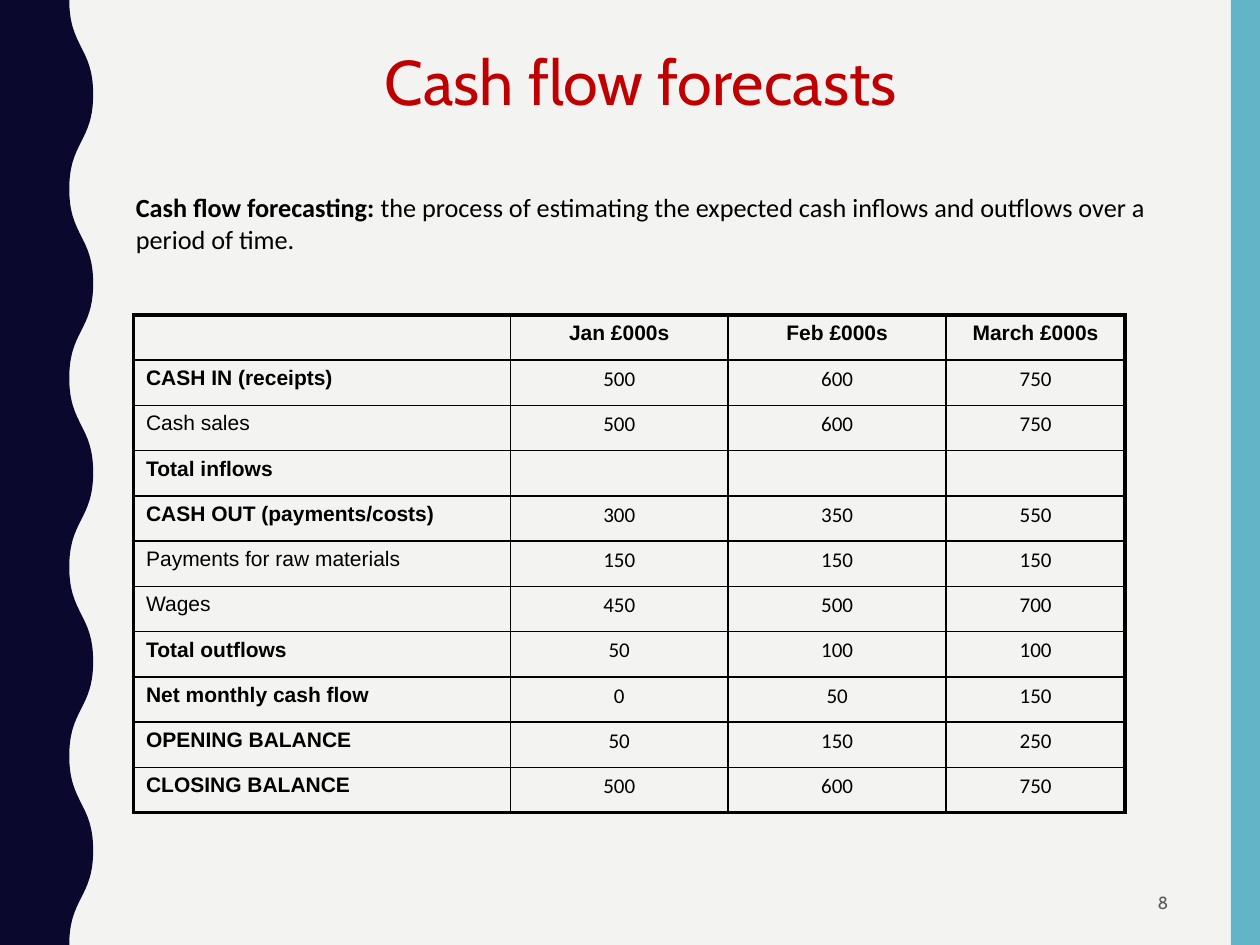
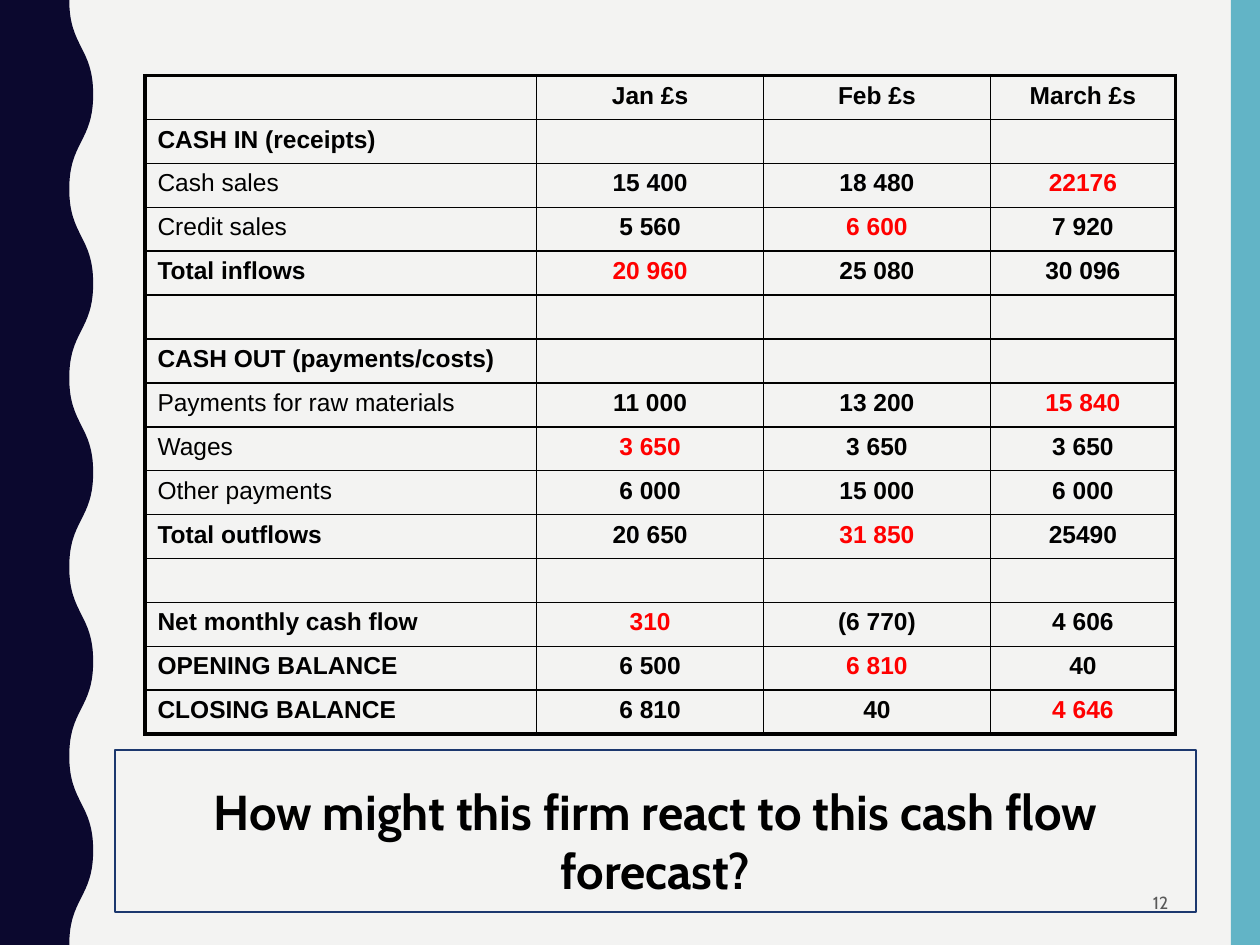
from pptx import Presentation
from pptx.dml.color import RGBColor
from pptx.enum.shapes import MSO_SHAPE as Preset
from pptx.enum.text import MSO_ANCHOR as Anchor, MSO_AUTO_SIZE as AutoSize, PP_ALIGN as Align
from pptx.oxml.ns import qn
from pptx.util import Inches, Pt
from lxml.etree import SubElement

PAPER, NAVY, TEAL = "F3F3F2", "0B082E", "62B4C6"
BLACK, GREY, RED, CRIMSON, OUTLINE = "000000", "595959", "FF0000", "C00000", "1B376E"
WIDTH, HEIGHT = 10, 7.5
BAND_WIDTH = 0.23
WAVE_INNER, WAVE_OUTER, WAVE_STEP = 0.55, 0.74, 0.75
THIN, THICK = 1, 2.25

PLAIN_LABELS = {"Cash sales", "Credit sales", "Payments for raw materials", "Wages", "Other payments"}
BLANK = ("", "", "")

FORECAST = {
    "place": (1.06, 2.5, 3.95),
    "columns": (2.99, 1.73, 1.73, 1.42),
    "size": 12,
    "value_font": "Calibri",
    "value_bold": False,
    "rows": [
        ("", ("Jan £000s", "Feb £000s", "March £000s"), None),
        ("CASH IN (receipts)", ("500", "600", "750"), None),
        ("Cash sales", ("500", "600", "750"), None),
        ("Total inflows", BLANK, None),
        ("CASH OUT (payments/costs)", ("300", "350", "550"), None),
        ("Payments for raw materials", ("150", "150", "150"), None),
        ("Wages", ("450", "500", "700"), None),
        ("Total outflows", ("50", "100", "100"), None),
        ("Net monthly cash flow", ("0", "50", "150"), None),
        ("OPENING BALANCE", ("50", "150", "250"), None),
        ("CLOSING BALANCE", ("500", "600", "750"), None),
    ],
}

ANSWERS = {
    "place": (1.15, 0.6, 5.23),
    "columns": (3.11, 1.8, 1.8, 1.47),
    "size": 14,
    "value_font": "Arial",
    "value_bold": True,
    "rows": [
        ("", ("Jan £s", "Feb £s", "March £s"), None),
        ("CASH IN (receipts)", BLANK, None),
        ("Cash sales", ("15 400", "18 480", "22176"), 3),
        ("Credit sales", ("5 560", "6 600", "7 920"), 2),
        ("Total inflows", ("20 960", "25 080", "30 096"), 1),
        ("", BLANK, None),
        ("CASH OUT (payments/costs)", BLANK, None),
        ("Payments for raw materials", ("11 000", "13 200", "15 840"), 3),
        ("Wages", ("3 650", "3 650", "3 650"), 1),
        ("Other payments", ("6 000", "15 000", "6 000"), None),
        ("Total outflows", ("20 650", "31 850", "25490"), 2),
        ("", BLANK, None),
        ("Net monthly cash flow", ("310", "(6 770)", "4 606"), 1),
        ("OPENING BALANCE", ("6 500", "6 810", "40"), 2),
        ("CLOSING BALANCE", ("6 810", "40", "4 646"), 3),
    ],
}

PAGES = [
    {
        "number": "8",
        "title": "Cash flow forecasts",
        "title_place": (0.17, 0.29, 9.83, 0.75),
        "title_format": {"size": 36, "color": CRIMSON},
        "table": FORECAST,
        "definition": (
            "Cash flow forecasting: ",
            "the process of estimating the expected cash inflows and outflows over a period of time.",
        ),
    },
    {
        "number": "12",
        "title": "How might this firm react to this cash flow forecast?",
        "title_place": (0.91, 5.95, 8.58, 1.29),
        "title_format": {"size": 28, "bold": True},
        "title_line": OUTLINE,
        "table": ANSWERS,
    },
]


def rgb(color):
    return RGBColor.from_string(color)


def write(para, text, font="Cabin", size=12, color=BLACK, bold=False, align=Align.LEFT):
    para.alignment = align
    if not text:
        para._p.get_or_add_endParaRPr().set("sz", str(size * 100))
        return
    span = para.add_run()
    span.text = text
    span.font.name = font
    span.font.size = Pt(size)
    span.font.bold = bold
    span.font.color.rgb = rgb(color)


def paint(shape, color):
    shape.fill.solid()
    shape.fill.fore_color.rgb = rgb(color)
    shape.line.fill.background()
    shape.shadow.inherit = False


def add_box(page, place, anchor=Anchor.TOP):
    frame = page.shapes.add_textbox(*map(Inches, place)).text_frame
    frame.word_wrap = True
    frame.vertical_anchor = anchor
    return frame.paragraphs[0]


def add_wave(page):
    steps = round(HEIGHT / WAVE_STEP)
    crests = [(Inches(WAVE_OUTER if step % 2 else WAVE_INNER), Inches(step * WAVE_STEP))
              for step in range(steps + 1)]
    builder = page.shapes.build_freeform(*crests[0])
    builder.add_line_segments([*crests[1:], (0, Inches(HEIGHT)), (0, 0)], close=True)
    wave = builder.convert_to_shape()
    paint(wave, NAVY)
    segments = list(wave._element.iter(qn("a:lnTo")))[:steps]
    for segment, (x1, y1), (x2, y2) in zip(segments, crests, crests[1:]):
        middle = (y1 + y2) // 2
        segment.tag = qn("a:cubicBezTo")
        segment.clear()
        for x, y in ((x1, middle), (x2, middle), (x2, y2)):
            SubElement(segment, qn("a:pt"), x=str(x), y=str(y))


def add_frame(page):
    place = (WIDTH - BAND_WIDTH, 0, BAND_WIDTH, HEIGHT)
    paint(page.shapes.add_shape(Preset.RECTANGLE, *map(Inches, place)), TEAL)
    add_wave(page)


def set_title(page, text, place, line, **style):
    title = page.shapes.title
    title.left, title.top, title.width, title.height = map(Inches, place)
    if line:
        title.line.color.rgb = rgb(line)
        title.line.width = Pt(1)
    frame = title.text_frame
    frame.auto_size = AutoSize.NONE
    frame.word_wrap = True
    frame.vertical_anchor = Anchor.BOTTOM
    frame.margin_bottom = Inches(0.1)
    write(frame.paragraphs[0], text, align=Align.CENTER, **style)


def set_borders(cell, widths):
    properties = cell._tc.get_or_add_tcPr()
    for position, (side, width) in enumerate(widths.items()):
        line = properties.makeelement(qn(f"a:ln{side}"), {"w": str(Pt(width))})
        fill = SubElement(line, qn("a:solidFill"))
        SubElement(fill, qn("a:srgbClr"), val=BLACK)
        properties.insert(position, line)


def add_cash_table(page, content):
    rows, columns = content["rows"], content["columns"]
    left, top, height = content["place"]
    size = (left, top, sum(columns), height)
    table = page.shapes.add_table(len(rows), len(columns), *map(Inches, size)).table
    table.first_row = table.horz_banding = False
    for column, width in zip(table.columns, columns):
        column.width = Inches(width)
    last_row, last_column = len(rows) - 1, len(columns) - 1
    for r, (label, values, answer) in enumerate(rows):
        table.rows[r].height = Inches(height / len(rows))
        for c, text in enumerate((label, *values)):
            cell = table.cell(r, c)
            cell.fill.background()
            set_borders(cell, {
                "L": THICK if c == 0 else THIN,
                "R": THICK if c == last_column else THIN,
                "T": THICK if r == 0 else THIN,
                "B": THICK if r == last_row else THIN,
            })
            if r == 0 or c == 0:
                font, bold = "Arial", text not in PLAIN_LABELS
            else:
                font, bold = content["value_font"], content["value_bold"]
            write(cell.text_frame.paragraphs[0], text, font=font, bold=bold,
                  size=content["size"], color=RED if c == answer else BLACK,
                  align=Align.CENTER if c else Align.LEFT)


def build_page(deck, content):
    page = deck.slides.add_slide(deck.slide_layouts[5])
    add_frame(page)
    set_title(page, content["title"], content["title_place"], content.get("title_line"),
              **content["title_format"])
    add_cash_table(page, content["table"])
    number = add_box(page, (7.06, 6.97, 2.31, 0.38), Anchor.MIDDLE)
    write(number, content["number"], size=10, color=GREY, align=Align.RIGHT)
    if "definition" in content:
        term, meaning = content["definition"]
        para = add_box(page, (0.98, 1.47, 8.5, 0.61))
        write(para, term, font="Calibri", size=15, bold=True)
        write(para, meaning, font="Calibri", size=15)


def main():
    deck = Presentation()
    deck.slide_width, deck.slide_height = Inches(WIDTH), Inches(HEIGHT)
    background = deck.slide_master.background.fill
    background.solid()
    background.fore_color.rgb = rgb(PAPER)
    for content in PAGES:
        build_page(deck, content)
    deck.save("out.pptx")


if __name__ == "__main__":
    main()
